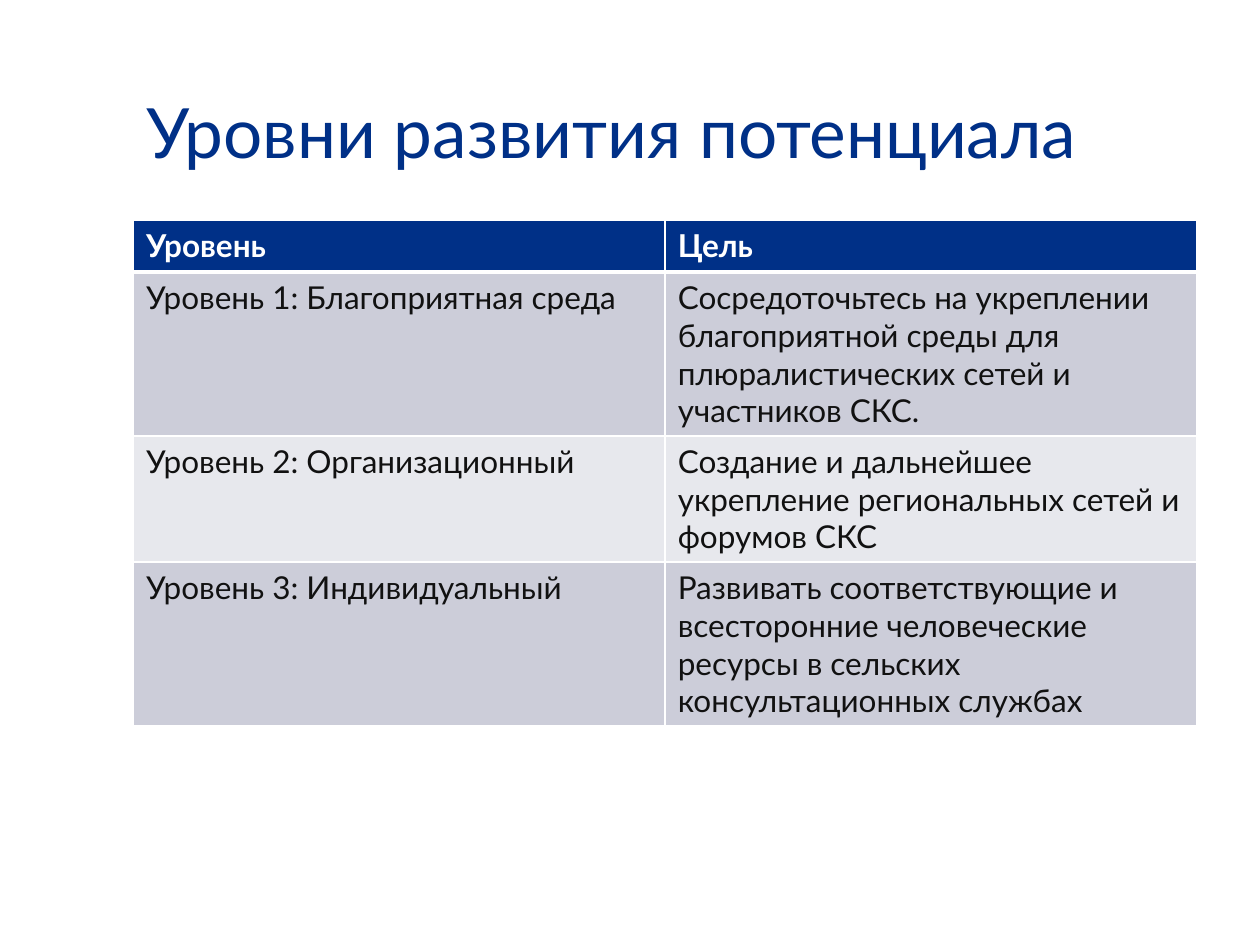
from lxml.etree import SubElement
from pptx import Presentation
from pptx.dml.color import RGBColor
from pptx.enum.text import MSO_ANCHOR, MSO_AUTO_SIZE, PP_ALIGN
from pptx.oxml.ns import qn
from pptx.util import Inches, Pt

COLORS = {
    "navy": "003087",
    "white": "FFFFFF",
    "text": "111111",
    "odd": "CCCDD9",
    "even": "E7E8ED",
}
FONT = "Lato"
LEFT, WIDTH = Inches(1.06), Inches(8.44)

ROWS = [
    ("Уровень", "Цель"),
    ("Уровень 1: Благоприятная среда",
     "Сосредоточьтесь на укреплении благоприятной среды для "
     "плюралистических сетей и участников СКС."),
    ("Уровень 2: Организационный",
     "Создание и дальнейшее укрепление региональных сетей и форумов СКС"),
    ("Уровень 3: Индивидуальный",
     "Развивать соответствующие и всесторонние человеческие ресурсы "
     "в сельских консультационных службах"),
]
ROW_HEIGHTS = [0.41, 1.3, 1, 1.3]


def format_text(para, size, color, bold=False):
    for span in para.runs:
        span.font.name = FONT
        span.font.size = Pt(size)
        span.font.bold = bold
        span.font.color.rgb = RGBColor.from_string(COLORS[color])


def set_borders(cell, widths):
    properties = cell._tc.get_or_add_tcPr()
    for index, (side, width) in enumerate(widths.items()):
        line = SubElement(properties, qn(f"a:{side}"), w=str(Pt(width)))
        fill = SubElement(line, qn("a:solidFill"))
        SubElement(fill, qn("a:srgbClr"), val=COLORS["white"])
        properties.insert(index, line)


deck = Presentation()
deck.slide_width, deck.slide_height = Inches(10), Inches(7.5)
page = deck.slides.add_slide(deck.slide_layouts[5])

title = page.shapes.title
title.left, title.top = LEFT, Inches(0.52)
title.width, title.height = WIDTH, Inches(1.03)
frame = title.text_frame
frame.text = "Уровни развития потенциала"
frame.word_wrap = True
frame.auto_size = MSO_AUTO_SIZE.NONE
frame.vertical_anchor = MSO_ANCHOR.MIDDLE
frame.paragraphs[0].alignment = PP_ALIGN.LEFT
format_text(frame.paragraphs[0], 39.6, "navy")

table = page.shapes.add_table(
    len(ROWS), 2, LEFT, Inches(1.75), WIDTH, Inches(sum(ROW_HEIGHTS))
).table
for row_index, (texts, height) in enumerate(zip(ROWS, ROW_HEIGHTS)):
    table.rows[row_index].height = Inches(height)
    header = row_index == 0
    fill_name = "navy" if header else "odd" if row_index % 2 else "even"
    for column_index, text in enumerate(texts):
        cell = table.cell(row_index, column_index)
        cell.text_frame.text = text
        format_text(cell.text_frame.paragraphs[0], 18,
                    "white" if header else "text", header)
        cell.fill.solid()
        cell.fill.fore_color.rgb = RGBColor.from_string(COLORS[fill_name])
        set_borders(cell, {"lnL": 1, "lnR": 1,
                           "lnT": 3 if row_index == 1 else 1,
                           "lnB": 3 if header else 1})

deck.save("out.pptx")
